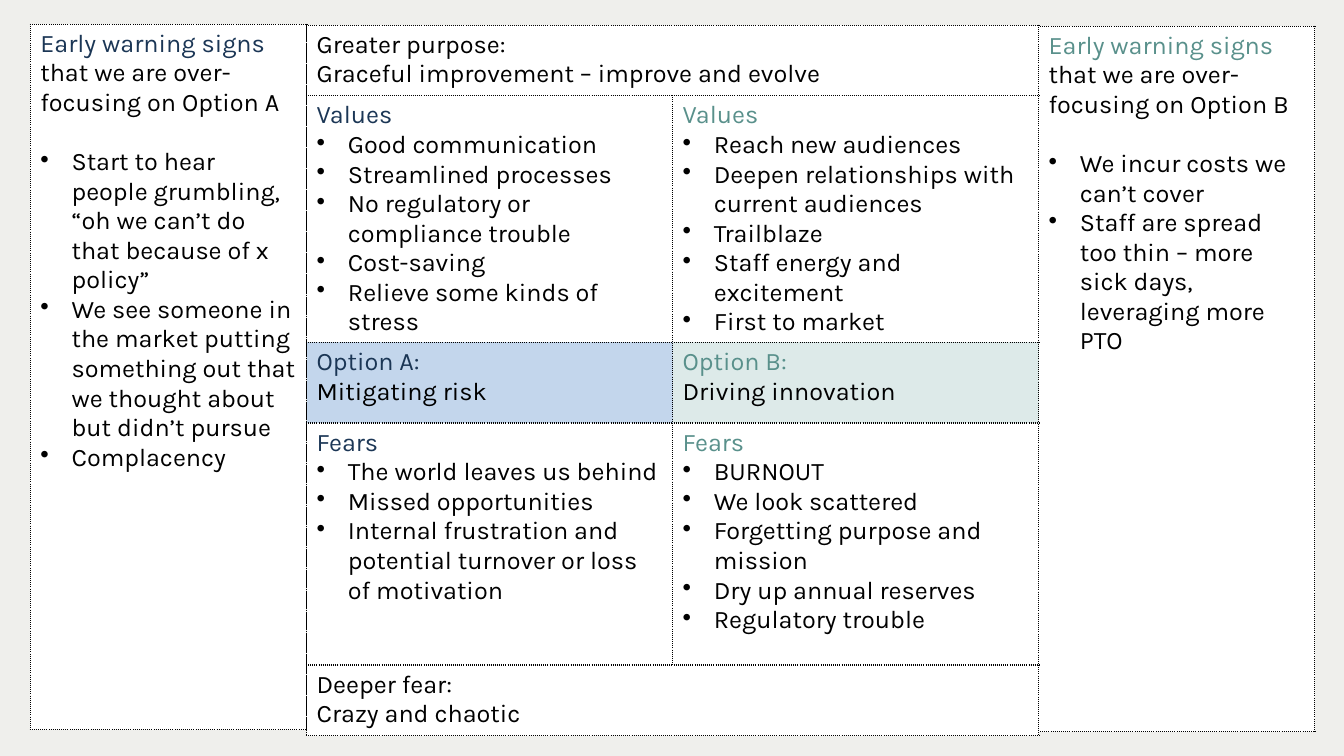
import pptx
import pptx.dml.color
import pptx.oxml
import pptx.oxml.ns
import pptx.util
from dataclasses import dataclass
from lxml import etree

Inches = pptx.util.Inches
Pt = pptx.util.Pt


@dataclass(frozen=True)
class Theme:
    back: str = "EFEFEC"
    white: str = "FFFFFF"
    ink: str = "000000"
    navy: str = "1B3655"
    teal: str = "59908B"
    blue: str = "C3D6EC"
    mint: str = "DDEAE9"
    font: str = "Karla"
    size: float = 18
    gap: float = 21
    line: float = 1


T = Theme()


def rgb(code):
    return pptx.dml.color.RGBColor.from_string(code)


def edge(cell):
    props = cell._tc.get_or_add_tcPr()
    for side in ("lnL", "lnR", "lnT", "lnB"):
        line = etree.SubElement(props, pptx.oxml.ns.qn(f"a:{side}"), w=str(Pt(T.line)))
        fill = etree.SubElement(line, pptx.oxml.ns.qn("a:solidFill"))
        etree.SubElement(fill, pptx.oxml.ns.qn("a:srgbClr"), val=T.ink)
        etree.SubElement(line, pptx.oxml.ns.qn("a:prstDash"), val="sysDot")


def grid(slide, left, top, widths, heights):
    frame = slide.shapes.add_table(
        len(heights), len(widths), Inches(left), Inches(top),
        Inches(sum(widths)), Inches(sum(heights)))
    table = frame.table
    table.first_row = False
    table.horz_banding = False
    for col, width in zip(table.columns, widths):
        col.width = Inches(width)
    for row, height in zip(table.rows, heights):
        row.height = Inches(height)
    for cell in table.iter_cells():
        edge(cell)
        paint(cell, T.white)
    return table


def paint(cell, color):
    cell.fill.solid()
    cell.fill.fore_color.rgb = rgb(color)


def bullet(para):
    props = para._p.get_or_add_pPr()
    props.set("marL", str(Inches(0.31)))
    props.set("indent", str(Inches(-0.31)))
    etree.SubElement(props, pptx.oxml.ns.qn("a:buChar"), char="•")


def write(cell, lines, items=(), gap=0):
    frame = cell.text_frame
    rows = [(line, False) for line in lines]
    rows += [([(item, T.ink)], True) for item in items]
    for index, (runs, dotted) in enumerate(rows):
        para = frame.add_paragraph() if index else frame.paragraphs[0]
        if dotted:
            bullet(para)
        if gap and index == len(lines):
            para.space_before = Pt(gap)
        para.font.name = T.font
        para.font.size = Pt(T.size)
        if len(runs) == 1:
            para.font.color.rgb = rgb(runs[0][1])
        for text, color in runs:
            run = para.add_run()
            run.text = text
            if len(runs) > 1:
                run.font.color.rgb = rgb(color)


def signs(slide, left, top, color, name, items):
    table = grid(slide, left, top, [2.74], [7])
    head = [("Early warning signs ", color),
            (f"that we are over-focusing on Option {name}", T.ink)]
    write(table.cell(0, 0), [head], items, T.gap)


def banner(table, row, head, text):
    cell = table.cell(row, 0)
    cell.merge(table.cell(row, 1))
    write(cell, [[(head, T.ink)], [(text, T.ink)]])


def option(table, col, color, tint, name, title, values, fears):
    write(table.cell(1, col), [[("Values", color)]], values)
    middle = table.cell(2, col)
    paint(middle, tint)
    write(middle, [[(f"Option {name}:", color)], [(title, T.ink)]])
    write(table.cell(3, col), [[("Fears", color)]], fears)


def main():
    deck = pptx.Presentation()
    deck.slide_width = Inches(13.33)
    deck.slide_height = Inches(7.5)
    slide = deck.slides.add_slide(deck.slide_layouts[6])
    slide.background.fill.solid()
    slide.background.fill.fore_color.rgb = rgb(T.back)

    signs(slide, 10.3, 0.26, T.teal, "B", [
        "We incur costs we can’t cover",
        "Staff are spread too thin – more sick days, leveraging more PTO"])
    signs(slide, 0.3, 0.24, T.navy, "A", [
        "Start to hear people grumbling, “oh we can’t do that because of x policy”",
        "We see someone in the market putting something out that we thought "
        "about but didn’t pursue",
        "Complacency"])

    table = grid(slide, 3.04, 0.25, [3.63] * 2, [0.7, 2.4, 0.8, 2.4, 0.7])
    banner(table, 0, "Greater purpose:", "Graceful improvement – improve and evolve")
    option(table, 0, T.navy, T.blue, "A", "Mitigating risk",
           ["Good communication", "Streamlined processes",
            "No regulatory or compliance trouble", "Cost-saving",
            "Relieve some kinds of stress"],
           ["The world leaves us behind", "Missed opportunities",
            "Internal frustration and potential turnover or loss of motivation"])
    option(table, 1, T.teal, T.mint, "B", "Driving innovation",
           ["Reach new audiences", "Deepen relationships with current audiences",
            "Trailblaze", "Staff energy and excitement", "First to market"],
           ["BURNOUT", "We look scattered", "Forgetting purpose and mission",
            "Dry up annual reserves", "Regulatory trouble"])
    banner(table, 4, "Deeper fear:", "Crazy and chaotic")
    deck.save("out.pptx")


if __name__ == "__main__":
    main()
